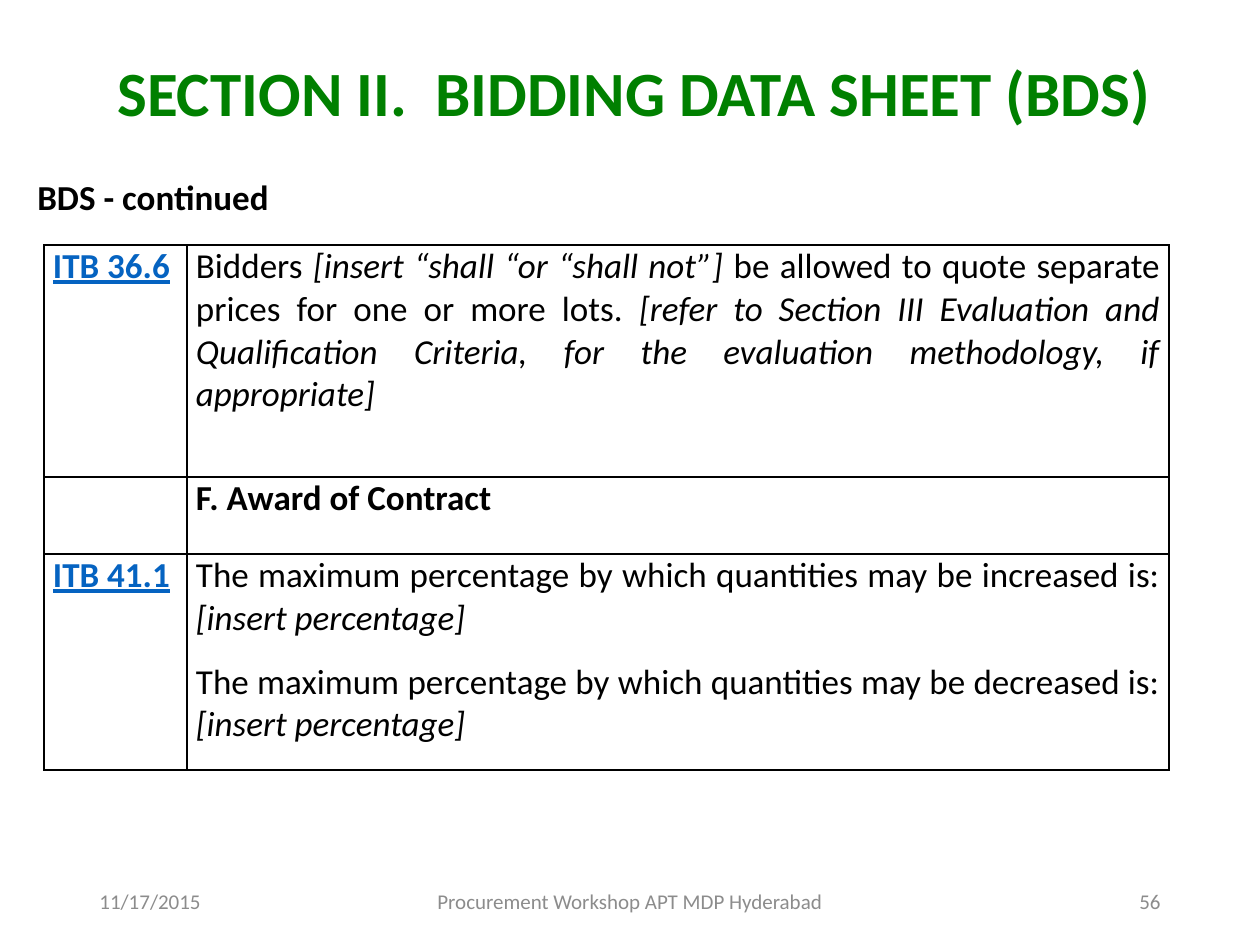
from lxml import etree
from pptx import Presentation, util as u
from pptx.dml.color import RGBColor
from pptx.enum import text as t
from pptx.oxml import ns

GREEN = RGBColor(0x00, 0x80, 0x00)
BLACK = RGBColor(0x00, 0x00, 0x00)
BLUE = RGBColor(0x05, 0x63, 0xC1)
GRAY = RGBColor(0x8C, 0x8C, 0x8C)
FONT = "Calibri"
LEFT, MID, RIGHT, JUST = (t.PP_ALIGN.LEFT, t.PP_ALIGN.CENTER,
                          t.PP_ALIGN.RIGHT, t.PP_ALIGN.JUSTIFY)
TOP, CENTER, BOTTOM = (t.MSO_ANCHOR.TOP, t.MSO_ANCHOR.MIDDLE,
                       t.MSO_ANCHOR.BOTTOM)


def px(n):
    return u.Emu(round(n * 914400 / 126))


def add_run(para, words, size, color=BLACK, bold=False, italic=False,
            under=False):
    run = para.add_run()
    run.text = words
    font = run.font
    font.name, font.size, font.color.rgb = FONT, u.Pt(size), color
    font.bold, font.italic, font.underline = bold, italic, under


def add_text(slide, box, words, size, color, align=LEFT, anchor=TOP,
             bold=False, line=1.0, inset=6):
    shape = slide.shapes.add_textbox(*map(px, box))
    frame = shape.text_frame
    frame.word_wrap = True
    frame.vertical_anchor = anchor
    frame.margin_top = px(inset)
    para = frame.paragraphs[0]
    para.alignment, para.line_spacing = align, line
    add_run(para, words, size, color, bold)


def add_head(slide, box):
    add_text(slide, box, "SECTION II.  BIDDING DATA SHEET (BDS)", 36, GREEN,
             MID, BOTTOM, True, 0.9)


def add_body(slide, box):
    # The heading starts one line below the top of the box
    add_text(slide, box, "BDS - continued", 20, BLACK, bold=True, line=0.9,
             inset=64)


def add_foot(slide, box):
    x, y, w, h = box
    side, mid = 284, 426
    parts = [("11/17/2015", x, side, LEFT),
             ("Procurement Workshop APT MDP Hyderabad", x + (w - mid) / 2,
              mid, MID),
             ("56", x + w - side, side, RIGHT)]
    for words, left, wide, align in parts:
        add_text(slide, (left, y, wide, h), words, 12, GRAY, align, CENTER)


# Table text: each cell is a list of paragraphs, each a list of (words, style)
PLAIN, SLANT, BOLD = {}, {"italic": True}, {"bold": True}
LINK = {"bold": True, "under": True, "color": BLUE}


def limit(verb):
    return [(f"The maximum percentage by which quantities may be {verb} is: ",
             PLAIN), ("[insert percentage]", SLANT)]


ROWS = [
    (232, [[("ITB 36.6", LINK)]],
     [[("Bidders ", PLAIN),
       ("[insert “shall “or “shall not”]", SLANT),
       (" be allowed to quote separate prices for one or more lots. ", PLAIN),
       ("[refer to Section III Evaluation and Qualification Criteria, for "
        "the evaluation methodology, if appropriate]", SLANT)]]),
    (77, [], [[("F. Award of Contract", BOLD)]]),
    (216, [[("ITB 41.1", LINK)]], [limit("increased"), limit("decreased")]),
]


def add_rules(cell):
    props = cell._tc.get_or_add_tcPr()
    for side in ("lnL", "lnR", "lnT", "lnB"):
        line = etree.SubElement(props, ns.qn(f"a:{side}"), w=str(u.Pt(1)))
        fill = etree.SubElement(line, ns.qn("a:solidFill"))
        etree.SubElement(fill, ns.qn("a:srgbClr"), val=str(BLACK))


def fill_cell(cell, paras, align, after):
    add_rules(cell)
    cell.fill.background()
    cell.margin_left = cell.margin_right = px(9)
    cell.margin_top = cell.margin_bottom = 0
    frame = cell.text_frame
    for i, runs in enumerate(paras):
        para = frame.add_paragraph() if i else frame.paragraphs[0]
        para.alignment = align
        para.space_before, para.space_after = u.Pt(6), u.Pt(after)
        for words, style in runs:
            add_run(para, words, 20, **style)


def add_grid(slide, box):
    table = slide.shapes.add_table(len(ROWS), 2, *map(px, box)).table
    table.first_row = table.horz_banding = False
    first = 143
    table.columns[0].width = px(first)
    table.columns[1].width = px(box[2] - first)
    for row, (high, label, body) in zip(table.rows, ROWS):
        row.height = px(high)
        fill_cell(row.cells[0], label, LEFT, 0)
        fill_cell(row.cells[1], body, JUST, 6)


def main():
    deck = Presentation()
    deck.slide_width, deck.slide_height = px(1260), px(945)
    slide = deck.slides.add_slide(deck.slide_layouts[6])
    add_head(slide, (44, 37, 1180, 99))
    add_body(slide, (25, 116, 1211, 804))
    add_foot(slide, (87, 876, 1086, 50))
    add_grid(slide, (44, 245, 1125, 525))
    deck.save("out.pptx")


if __name__ == "__main__":
    main()
